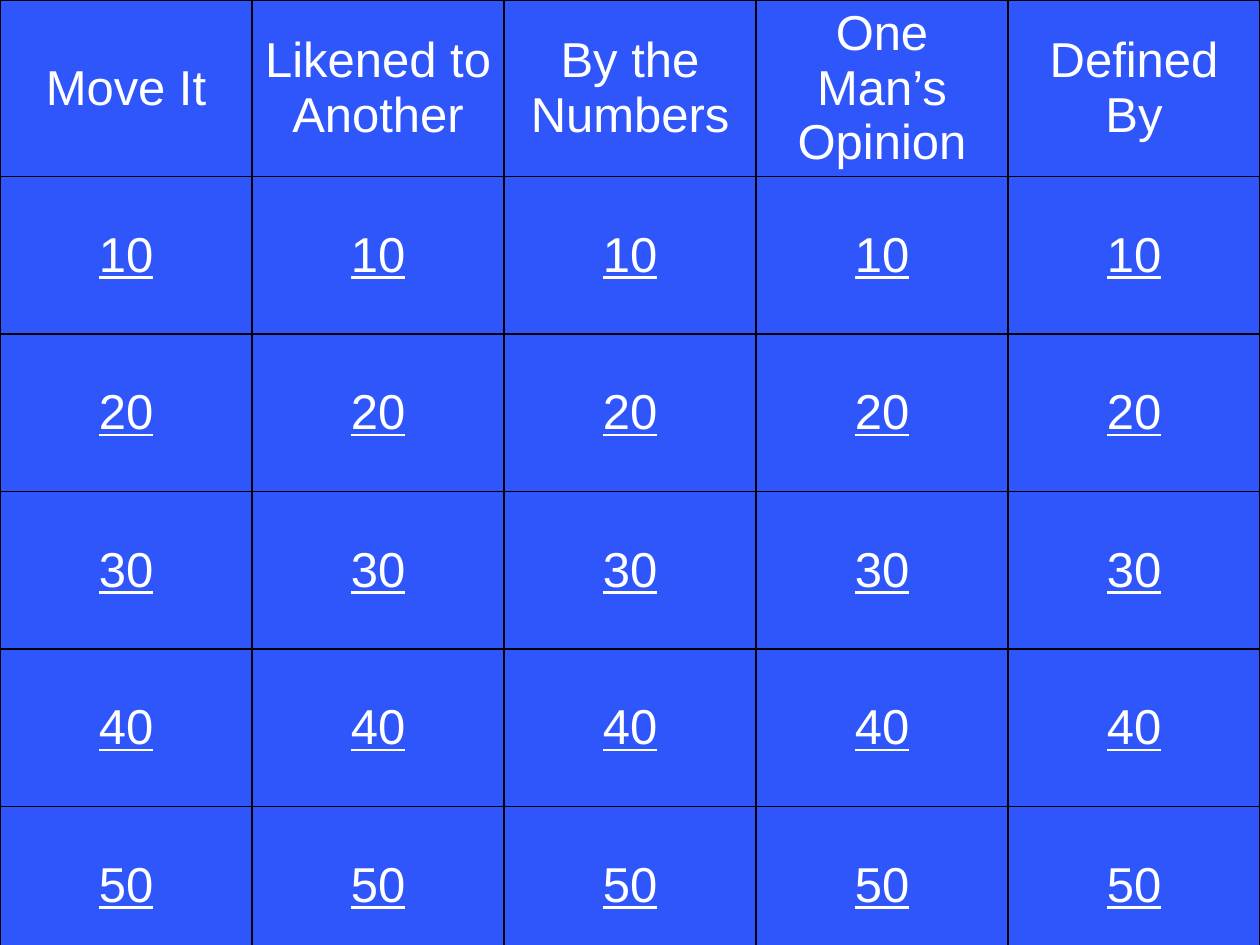
from dataclasses import dataclass

from lxml import etree
from pptx import Presentation
from pptx.dml.color import RGBColor
from pptx.enum import text
from pptx.oxml import ns
from pptx.util import Pt

BLUE = RGBColor(0x2F, 0x56, 0xFB)
WHITE = RGBColor(0xFF, 0xFF, 0xFF)
BLACK = RGBColor(0x00, 0x00, 0x00)

SLIDE_WIDTH, SLIDE_HEIGHT = 720, 540
BORDER_WIDTH = Pt(1)
CATEGORIES = ["Move It", "Likened to Another", "By the Numbers",
              "One Man’s Opinion", "Defined By"]
POINTS = range(10, 60, 10)


@dataclass(frozen=True)
class BoardCell:
    label: str
    underline: bool = False


def draw_borders(cell) -> None:
    properties = cell._tc.get_or_add_tcPr()
    for position, side in enumerate(("lnL", "lnR", "lnT", "lnB")):
        line = etree.Element(ns.qn(f"a:{side}"), w=str(BORDER_WIDTH))
        fill = etree.SubElement(line, ns.qn("a:solidFill"))
        etree.SubElement(fill, ns.qn("a:srgbClr"), val=str(BLACK))
        properties.insert(position, line)


def draw_cell(cell, content: BoardCell) -> None:
    cell.fill.background()
    cell.vertical_anchor = text.MSO_ANCHOR.MIDDLE
    paragraph = cell.text_frame.paragraphs[0]
    paragraph.alignment = text.PP_ALIGN.CENTER
    run = paragraph.add_run()
    run.text = content.label
    run.font.name = "Arial"
    run.font.size = Pt(28)
    run.font.color.rgb = WHITE
    if content.underline:
        run.font.underline = True
    draw_borders(cell)


def draw_board(slide, rows: list[list[BoardCell]]) -> None:
    board = slide.shapes.add_table(
        len(rows), len(rows[0]), Pt(0), Pt(0), Pt(SLIDE_WIDTH), Pt(SLIDE_HEIGHT)
    ).table
    board.first_row = False
    board.horz_banding = False
    for row_index, row in enumerate(rows):
        for column_index, content in enumerate(row):
            draw_cell(board.cell(row_index, column_index), content)


def main() -> None:
    presentation = Presentation()
    presentation.slide_width = Pt(SLIDE_WIDTH)
    presentation.slide_height = Pt(SLIDE_HEIGHT)
    slide = presentation.slides.add_slide(presentation.slide_layouts[6])
    slide.background.fill.solid()
    slide.background.fill.fore_color.rgb = BLUE

    header = [BoardCell(category) for category in CATEGORIES]
    clues = [[BoardCell(str(points), underline=True) for _ in CATEGORIES]
             for points in POINTS]
    draw_board(slide, [header, *clues])
    presentation.save("out.pptx")


if __name__ == "__main__":
    main()
